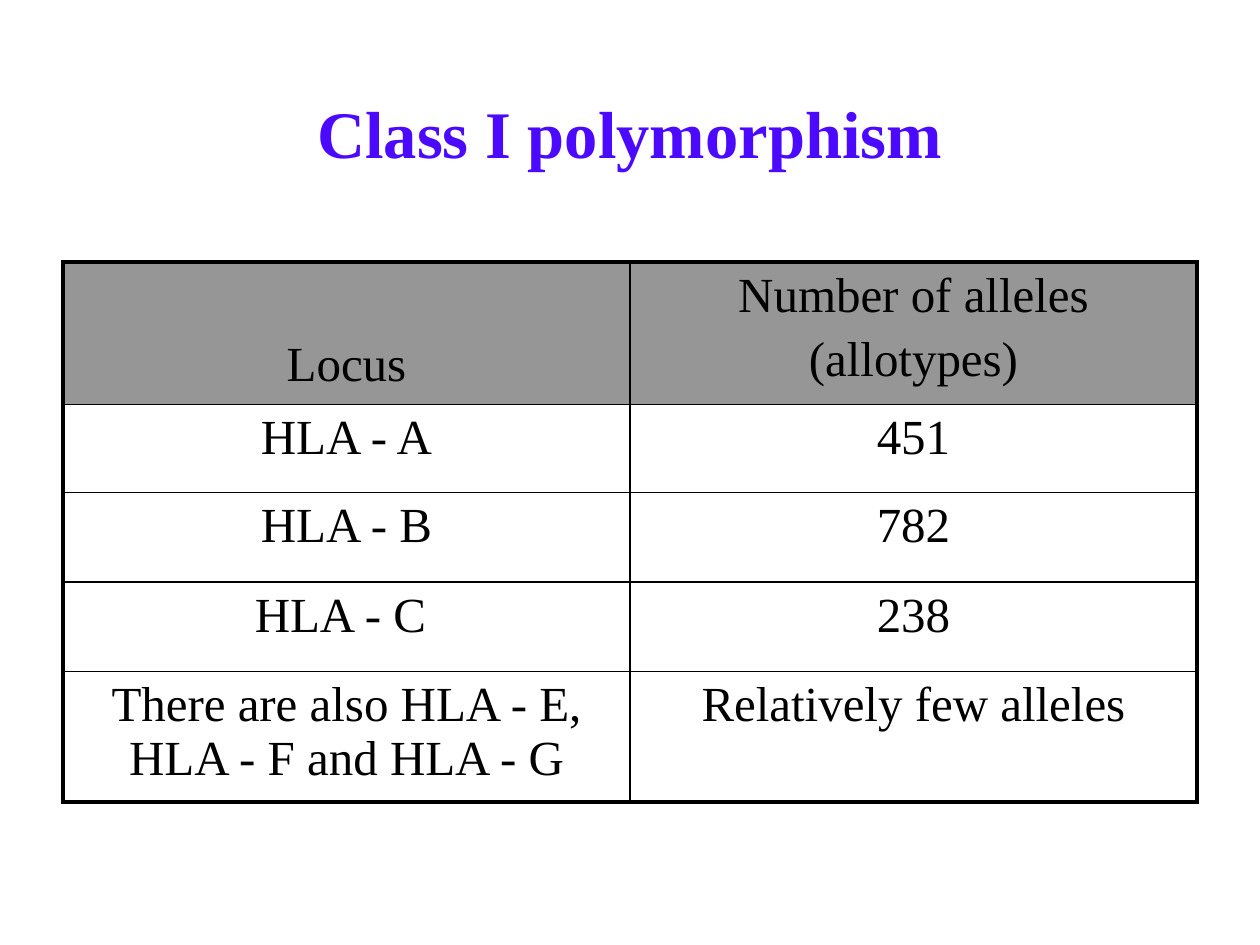
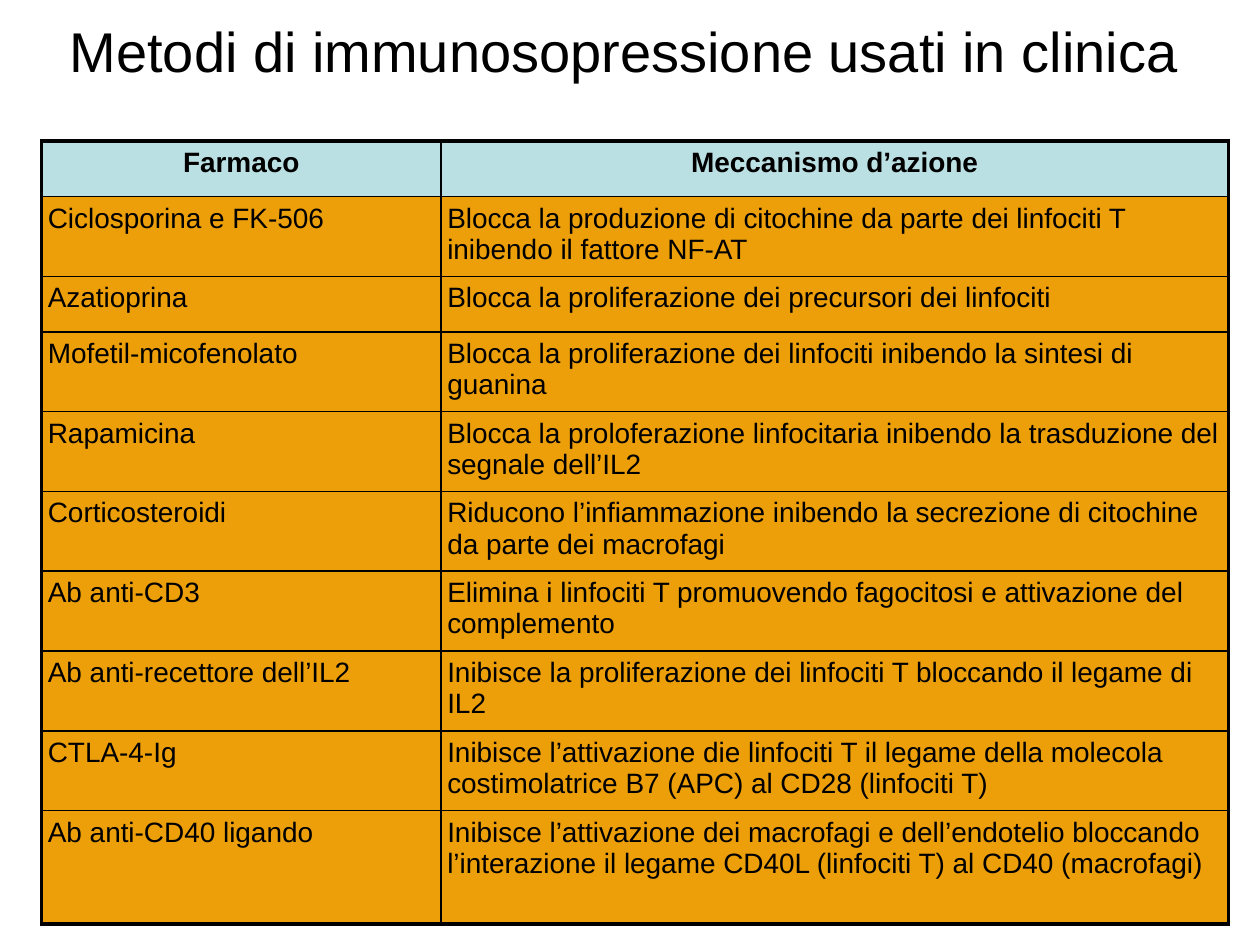
from lxml import etree
from pptx import Presentation
from pptx import util as u
from pptx.dml import color
from pptx.enum import text
from pptx.oxml import ns

COLOURS = {
    "ink": "000000",
    "violet": "4B0AFF",
    "grey": "969696",
    "white": "FFFFFF",
    "sky": "BBE0E3",
    "amber": "ED9F0A",
}
CENTER, LEFT = text.PP_ALIGN.CENTER, text.PP_ALIGN.LEFT
TOP, MIDDLE, BOTTOM = (
    text.MSO_ANCHOR.TOP, text.MSO_ANCHOR.MIDDLE, text.MSO_ANCHOR.BOTTOM)


class SlideBuilder:
    columns, rows = 40, 30
    inset = u.Inches(0.05)
    outer, inner = 2.25, 1

    def __init__(self):
        self.deck = Presentation()
        self.deck.slide_width = u.Inches(10)
        self.deck.slide_height = u.Inches(7.5)
        self.page = None
        self.font = None

    def across(self, count):
        return round(self.deck.slide_width * count / self.columns)

    def down(self, count):
        return round(self.deck.slide_height * count / self.rows)

    def place(self, left, top, width, height):
        return (self.across(left), self.down(top),
                self.across(width), self.down(height))

    def new_page(self, font):
        self.page = self.deck.slides.add_slide(self.deck.slide_layouts[6])
        self.font = font

    def style_margins(self, holder):
        holder.margin_left = holder.margin_right = self.inset
        holder.margin_top = holder.margin_bottom = self.inset

    def add_lines(self, frame, lines, size, colour="ink", bold=False,
                  align=CENTER, gap=0):
        frame.word_wrap = True
        for index, line in enumerate(lines):
            para = frame.add_paragraph() if index else frame.paragraphs[0]
            para.alignment = align
            para.space_before = u.Pt(gap if index else 0)
            span = para.add_run()
            span.text = line
            span.font.name = self.font
            span.font.size = u.Pt(size)
            span.font.bold = bold
            span.font.color.rgb = color.RGBColor.from_string(COLOURS[colour])

    def title(self, words, place, size, colour="ink", bold=False, anchor=TOP):
        box = self.page.shapes.add_textbox(*self.place(*place))
        frame = box.text_frame
        self.style_margins(frame)
        frame.vertical_anchor = anchor
        self.add_lines(frame, [words], size, colour, bold)

    def borders(self, cell, widths):
        properties = cell._tc.get_or_add_tcPr()
        for side, width in widths.items():
            line = etree.SubElement(
                properties, ns.qn(f"a:ln{side}"), w=str(u.Pt(width)))
            fill = etree.SubElement(line, ns.qn("a:solidFill"))
            etree.SubElement(fill, ns.qn("a:srgbClr"), val=COLOURS["ink"])

    def table(self, left, top, widths, heights, records, size, head_fill,
              body_fill, head_bold=False, body_align=CENTER, gap=0):
        place = self.place(left, top, sum(widths), sum(heights))
        table = self.page.shapes.add_table(
            len(heights), len(widths), *place).table
        table.first_row = table.horz_banding = False
        for column, width in zip(table.columns, widths):
            column.width = self.across(width)
        for row, height in zip(table.rows, heights):
            row.height = self.down(height)
        last_row, last_column = len(heights) - 1, len(widths) - 1
        for r, record in enumerate(records):
            for c, words in enumerate(record):
                cell = table.cell(r, c)
                self.style_margins(cell)
                edges = {"L": c == 0, "R": c == last_column,
                         "T": r == 0, "B": r == last_row}
                self.borders(cell, {side: self.outer if edge else self.inner
                                    for side, edge in edges.items()})
                cell.fill.solid()
                cell.fill.fore_color.rgb = color.RGBColor.from_string(
                    COLOURS[body_fill if r else head_fill])
                self.add_lines(cell.text_frame, words.split("\n"), size,
                               bold=head_bold and r == 0,
                               align=body_align if r else CENTER, gap=gap)
        return table


ALLELES = [
    ("Locus", "Number of alleles\n(allotypes)"),
    ("HLA - A", "451"),
    ("HLA - B", "782"),
    ("HLA - C ", "238"),
    ("There are also HLA - E, HLA - F and HLA - G", "Relatively few alleles"),
]

DRUGS = [
    ("Farmaco", "Meccanismo d’azione"),
    ("Ciclosporina e FK-506",
     "Blocca la produzione di citochine da parte dei linfociti T "
     "inibendo il fattore NF-AT"),
    ("Azatioprina", "Blocca la proliferazione dei precursori dei linfociti"),
    ("Mofetil-micofenolato",
     "Blocca la proliferazione dei linfociti inibendo la sintesi di guanina"),
    ("Rapamicina",
     "Blocca la proloferazione linfocitaria inibendo la trasduzione del "
     "segnale dell’IL2"),
    ("Corticosteroidi",
     "Riducono l’infiammazione inibendo la secrezione di citochine "
     "da parte dei macrofagi"),
    ("Ab anti-CD3",
     "Elimina i linfociti T promuovendo fagocitosi e attivazione del "
     "complemento"),
    ("Ab anti-recettore dell’IL2",
     "Inibisce la proliferazione dei linfociti T bloccando il legame di IL2"),
    ("CTLA-4-Ig",
     "Inibisce l’attivazione die linfociti T il legame della molecola "
     "costimolatrice B7 (APC) al CD28 (linfociti T)"),
    ("Ab anti-CD40 ligando",
     "Inibisce l’attivazione dei macrofagi e dell’endotelio bloccando "
     "l’interazione il legame CD40L (linfociti T) al CD40 (macrofagi)"),
]


def polymorphism_page(builder):
    builder.new_page("Times New Roman")
    builder.title("Class I polymorphism", (3, 1.68, 34, 5), 38,
                  colour="violet", bold=True, anchor=MIDDLE)
    table = builder.table(2, 8.32, [18, 18], [4.52, 2.8, 2.84, 2.84, 4.12],
                          ALLELES, 28, "grey", "white", gap=6)
    locus = table.cell(0, 0)
    locus.vertical_anchor = BOTTOM
    locus.margin_bottom = u.Inches(0.1)


def immunosuppression_page(builder):
    single, double, closing = 1.76, 2.52, 3.6
    builder.new_page("Arial")
    builder.title("Metodi di immunosopressione usati in clinica",
                  (1.28, 0.32, 37.08, 2.4), 32)
    builder.table(1.32, 4.48, [12.68, 25],
                  [single, double, single] + [double] * 6 + [closing],
                  DRUGS, 16, "sky", "amber", head_bold=True, body_align=LEFT)


def main():
    builder = SlideBuilder()
    polymorphism_page(builder)
    immunosuppression_page(builder)
    builder.deck.save("out.pptx")


if __name__ == "__main__":
    main()
